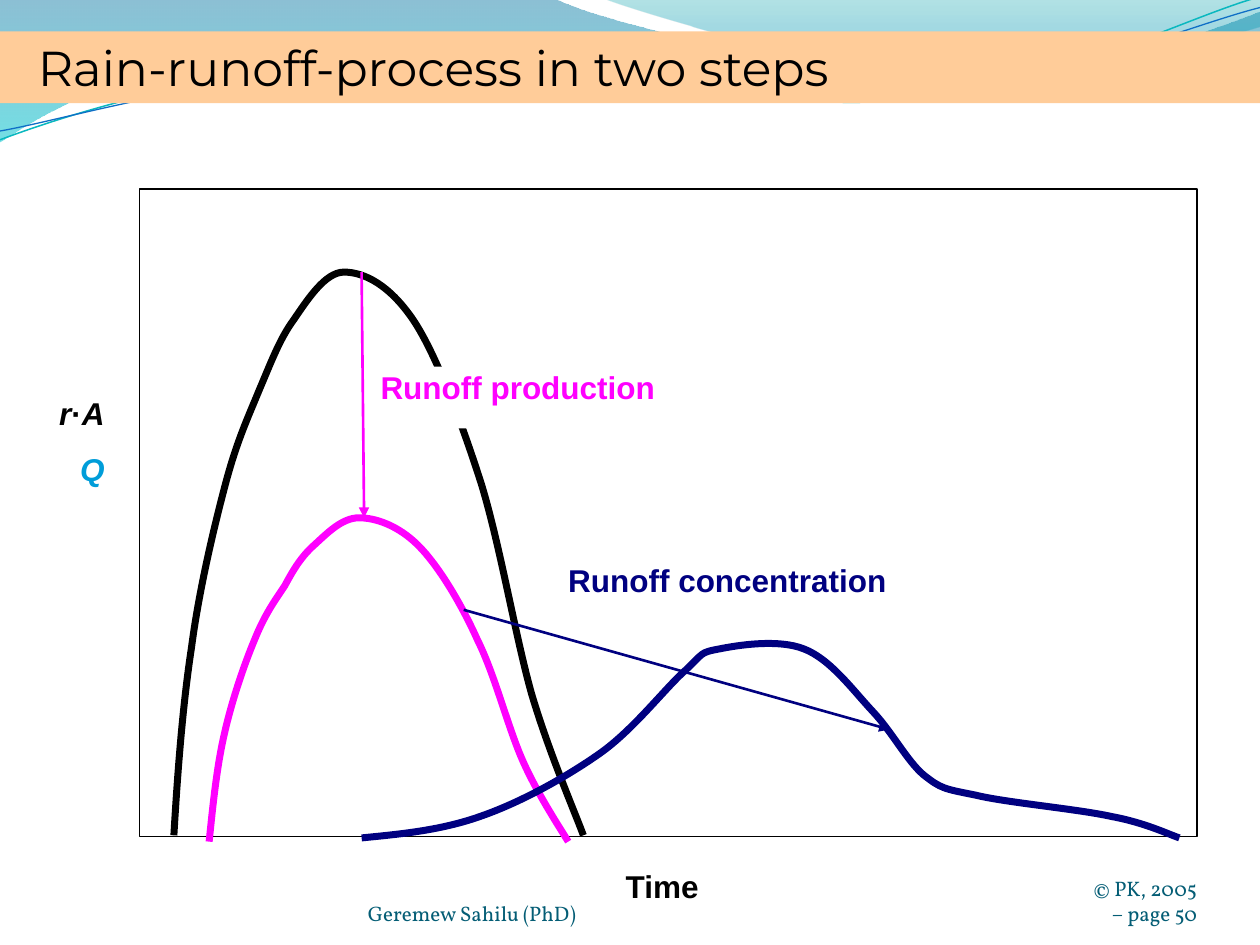
from dataclasses import dataclass
from typing import Optional

from lxml import etree
from pptx import Presentation
from pptx.dml.color import RGBColor
from pptx.enum import shapes, text
from pptx.oxml.ns import qn
from pptx.util import Emu, Pt

PX = 9144  # EMU per px: 100 px to the inch
BLACK, WHITE, MAGENTA, NAVY, TEAL = "000000", "FFFFFF", "FF00FF", "000080", "045D75"
LEFT, CENTER, RIGHT = text.PP_ALIGN.LEFT, text.PP_ALIGN.CENTER, text.PP_ALIGN.RIGHT
TOP, BOTTOM = text.MSO_ANCHOR.TOP, text.MSO_ANCHOR.BOTTOM


@dataclass
class Outline:
    """Segments hold 2 numbers for a line or 6 for a cubic curve."""
    start: tuple
    segments: list
    color: str = BLACK
    width: float = 4
    stops: tuple = ()  # (position, colour, opacity %) for a closed gradient area


@dataclass
class Arrow:
    start: tuple
    end: tuple
    color: str


@dataclass
class Label:
    box: tuple
    paragraphs: list  # each one a list of (text, italic) runs
    colors: tuple
    size: int = 18
    font: str = "Arial"
    bold: bool = True
    align: int = LEFT
    anchor: int = TOP
    insets: tuple = (10, 5, 10, 5)
    fill: Optional[str] = None


WAVES = [
    Outline((0, 0), [
        (440, -1), (476, 17, 664, 63, 758, 63), (853, 63, 958, 26, 1000, 9),
        (1001, 36), (983, 44, 870, 76, 746, 75), (622, 75, 382, 28, 257, 34),
        (129, 36, 46, 83, -1, 113)],
        stops=((0, "0074A1", 45), (1, "00C6CF", 55))),
    Outline((479, -1), [
        (509, 11, 682, 62, 769, 65), (856, 69, 961, 32, 1000, 21), (1000, 0)],
        stops=((0, "00A1A9", 30), (0.8, "008BBF", 45))),
    Outline((0, 111), [
        (48, 93, 158, 57, 277, 52), (395, 47, 593, 89, 713, 80),
        (833, 71, 938, 15, 998, -2)], "0AB8BF", 0.85),
    Outline((0, 104), [
        (47, 96, 164, 61, 283, 56), (403, 51, 597, 84, 717, 75),
        (836, 67, 941, 21, 1000, 6)], "0F6FC6", 0.75),
]

HYDROGRAPHS = [
    # Rainfall
    Outline((138, 663), [
        (141, 612, 145, 560, 152, 514), (158, 468, 170, 418, 179, 384),
        (188, 350, 197, 331, 206, 309), (215, 288, 222, 269, 233, 254),
        (244, 238, 258, 216, 273, 216), (289, 216, 309, 226, 328, 254),
        (346, 281, 366, 334, 382, 384), (397, 433, 409, 505, 422, 551),
        (436, 598, 456, 644, 463, 663)]),
    # Effective rainfall
    Outline((166, 668), [
        (169, 639, 172, 609, 178, 583), (184, 556, 194, 527, 202, 508),
        (210, 488, 218, 477, 226, 465), (233, 452, 239, 442, 249, 433),
        (259, 424, 271, 411, 285, 411), (298, 411, 316, 417, 332, 433),
        (348, 449, 366, 479, 379, 508), (393, 536, 403, 577, 415, 604),
        (427, 631, 445, 658, 451, 668)], MAGENTA),
    # Discharge
    Outline((287, 665), [
        (318, 662, 350, 659, 381, 648), (413, 637, 449, 617, 476, 598),
        (503, 579, 528, 546, 544, 532), (559, 518, 555, 518, 571, 515),
        (586, 512, 618, 507, 638, 515), (659, 523, 677, 548, 693, 565),
        (708, 581, 720, 604, 733, 615), (747, 626, 749, 626, 774, 631),
        (798, 637, 855, 642, 882, 648), (909, 653, 927, 662, 936, 665)], NAVY),
]

ARROWS = [
    Arrow((287, 216), (289, 411), MAGENTA),
    Arrow((368, 484), (706, 579), NAVY),
]

HEADINGS = [
    Label((292, 695, 367, 40), [[("Geremew Sahilu (PhD)", None)]], (TEAL,), 12,
          "Vollkorn", False, LEFT, BOTTOM, (0, 0, 0, 0)),
    Label((867, 695, 83, 40), [[("© PK, 2005 – page 50", None)]], (TEAL,), 12,
          "Vollkorn", False, RIGHT, BOTTOM, (0, 0, 0, 0)),
    Label((0, 25, 1000, 57), [[("Rain-runoff-process in two steps", None)]], (BLACK,),
          28, "Montserrat", False, insets=(30, 5, 10, 5), fill="FFCC99"),
]

CHART_LABELS = [
    Label((300, 291, 302, 49), [[("Runoff production", None)]], (MAGENTA,),
          insets=(2, 1, 2, 1), fill=WHITE),
    Label((449, 444, 354, 54), [[("Runoff concentration", None)]], (NAVY,),
          insets=(2, 1, 2, 1), fill=WHITE),
    Label((392, 683, 267, 50), [[("Time", None)]], (BLACK,), align=CENTER),
    Label((8, 308, 92, 110), [[("r", True), ("·", False), ("A", True)], [("Q", True)]],
          (BLACK, "009DD9"), align=RIGHT, insets=(10, 5, 17, 5)),
]


def px(n: int) -> Emu:
    return Emu(n * PX)


def rgb(color: str) -> RGBColor:
    return RGBColor.from_string(color)


def draw_rect(slide, box: tuple, fill: str, line: Optional[str] = None):
    sp = slide.shapes.add_shape(shapes.MSO_SHAPE.RECTANGLE, *map(px, box))
    sp.shadow.inherit = False
    sp.fill.solid()
    sp.fill.fore_color.rgb = rgb(fill)
    if line:
        sp.line.color.rgb = rgb(line)
        sp.line.width = Pt(0.75)
    else:
        sp.line.fill.background()
    return sp


def draw_outline(slide, o: Outline) -> None:
    points = [s[i:i + 2] for s in o.segments for i in range(0, len(s), 2)]
    builder = slide.shapes.build_freeform(*o.start, scale=PX)
    builder.add_line_segments(points, close=bool(o.stops))
    sp = builder.convert_to_shape()
    sp.shadow.inherit = False
    # Join each three points of a curved segment into one Bézier curve
    steps = iter(list(sp._element.iter(qn("a:lnTo"))))
    for segment in o.segments:
        first = next(steps)
        if len(segment) == 6:
            first.tag = qn("a:cubicBezTo")
            for step in (next(steps), next(steps)):
                first.append(step[0])
                step.getparent().remove(step)
    if not o.stops:
        sp.fill.background()
        sp.line.color.rgb = rgb(o.color)
        sp.line.width = Pt(o.width)
        return
    sp.line.fill.background()
    sp.fill.gradient()
    sp.fill.gradient_angle = 270
    for stop, (position, color, _) in zip(sp.fill.gradient_stops, o.stops):
        stop.position = position
        stop.color.rgb = rgb(color)
    for node, (_, _, opacity) in zip(sp._element.iter(qn("a:srgbClr")), o.stops):
        etree.SubElement(node, qn("a:alpha"), val=str(opacity * 1000))


def draw_arrow(slide, a: Arrow) -> None:
    line = slide.shapes.add_connector(
        shapes.MSO_CONNECTOR.STRAIGHT, *map(px, a.start + a.end))
    line.line.color.rgb = rgb(a.color)
    line.line.width = Pt(1.5)
    etree.SubElement(line.line._get_or_add_ln(), qn("a:tailEnd"), type="triangle")
    etree.SubElement(line._element.spPr, qn("a:effectLst"))


def draw_label(slide, label: Label) -> None:
    if label.fill:
        sp = draw_rect(slide, label.box, label.fill)
    else:
        sp = slide.shapes.add_textbox(*map(px, label.box))
    tf = sp.text_frame
    tf.word_wrap = True
    tf.vertical_anchor = label.anchor
    tf.margin_left, tf.margin_top, tf.margin_right, tf.margin_bottom = map(px, label.insets)
    for i, (runs, color) in enumerate(zip(label.paragraphs, label.colors)):
        p = tf.add_paragraph() if i else tf.paragraphs[0]
        p.alignment = label.align
        if i:
            p.space_before = Pt(10)
        p.font.name, p.font.size, p.font.bold = label.font, Pt(label.size), label.bold
        p.font.color.rgb = rgb(color)
        for content, italic in runs:
            r = p.add_run()
            r.text = content
            r.font.italic = italic


def main() -> None:
    prs = Presentation()
    prs.slide_width, prs.slide_height = px(1000), px(750)
    slide = prs.slides.add_slide(prs.slide_layouts[6])
    # Wave decoration, footers and title band
    for wave in WAVES:
        draw_outline(slide, wave)
    for label in HEADINGS:
        draw_label(slide, label)
    # Hydrograph diagram
    draw_rect(slide, (111, 150, 839, 514), WHITE, BLACK)
    for curve in HYDROGRAPHS:
        draw_outline(slide, curve)
    for arrow in ARROWS:
        draw_arrow(slide, arrow)
    for label in CHART_LABELS:
        draw_label(slide, label)
    prs.save("out.pptx")


if __name__ == "__main__":
    main()
